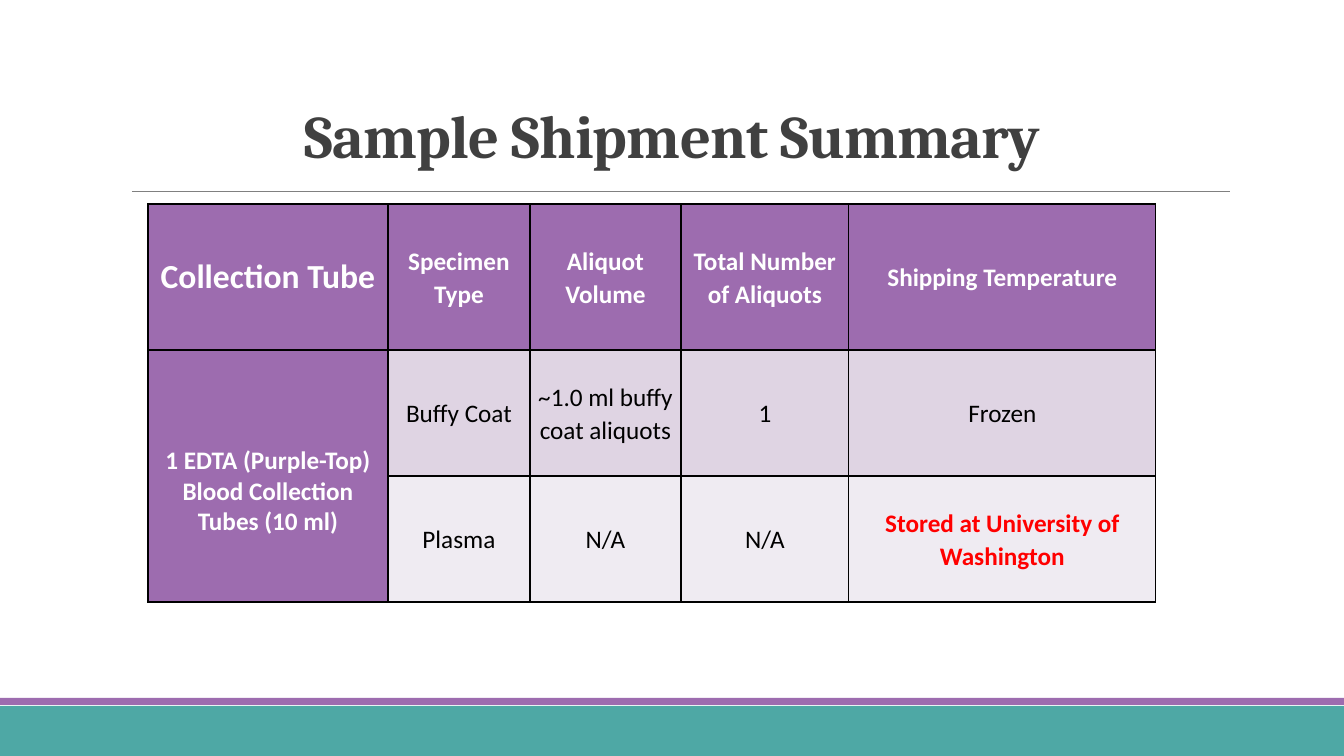
from lxml.etree import SubElement
from pptx import Presentation
from pptx.dml.color import RGBColor
from pptx.enum.shapes import MSO_CONNECTOR, MSO_SHAPE
from pptx.enum.text import MSO_ANCHOR, PP_ALIGN
from pptx.oxml import parse_xml
from pptx.oxml.ns import nsdecls, qn
from pptx.util import Emu, Pt

TEAL = RGBColor(0x4E, 0xA8, 0xA5)
PURPLE = RGBColor(0x9D, 0x6C, 0xAF)
LILAC = RGBColor(0xDF, 0xD4, 0xE3)
PALE = RGBColor(0xEF, 0xEB, 0xF2)
GRAY = RGBColor(0x80, 0x80, 0x80)
INK = RGBColor(0x40, 0x40, 0x40)
BLACK = RGBColor(0, 0, 0)
WHITE = RGBColor(0xFF, 0xFF, 0xFF)
RED = RGBColor(0xFF, 0, 0)

BODY = {"name": "Calibri", "size": Pt(18), "bold": False, "color": BLACK}
HEAD = {**BODY, "bold": True, "color": WHITE}
TUBE_HEAD = {**HEAD, "size": Pt(24)}
ALERT = {**BODY, "bold": True, "color": RED}
TITLE = {"name": "Cambria", "size": Pt(43.2), "bold": True, "color": INK}

COLUMNS = [240, 142, 151, 168, 307]
ROWS = [146, 126, 126]
FILLS = [PURPLE, LILAC, PALE]
SUMMARY = [
    ["Collection Tube", "Specimen Type", "Aliquot Volume",
     "Total Number of Aliquots", "Shipping Temperature"],
    ["1 EDTA (Purple-Top) Blood Collection Tubes (10 ml)", "Buffy Coat",
     "~1.0 ml buffy coat aliquots", "1", "Frozen"],
    ["", "Plasma", "N/A", "N/A", "Stored at University of Washington"],
]


def px(n):
    return Emu(round(n * 914400 / 100.8))


class SlideBuilder:
    """Draws styled elements on one slide, with lengths in px."""

    def __init__(self, prs):
        self.s = prs.slides.add_slide(prs.slide_layouts[6])

    def text(self, tf, text, style, spacing):
        p = tf.paragraphs[0]
        p.alignment = PP_ALIGN.CENTER
        p.line_spacing = spacing
        r = p.add_run()
        r.text = text
        for key, value in style.items():
            if key == "color":
                r.font.color.rgb = value
            else:
                setattr(r.font, key, value)
        return r

    def band(self, x, y, w, h, color):
        sp = self.s.shapes.add_shape(MSO_SHAPE.RECTANGLE, px(x), px(y), px(w), px(h))
        sp.shadow.inherit = False
        sp.fill.solid()
        sp.fill.fore_color.rgb = color
        sp.line.fill.background()

    def rule(self, x1, x2, y, color):
        line = self.s.shapes.add_connector(
            MSO_CONNECTOR.STRAIGHT, px(x1), px(y), px(x2), px(y))
        line.line.color.rgb = color
        line.line.width = Pt(0.5)
        SubElement(line._element.spPr, qn("a:effectLst"))

    def title(self, x, y, w, h, text):
        tf = self.s.shapes.add_textbox(px(x), px(y), px(w), px(h)).text_frame
        tf.word_wrap = True
        tf.vertical_anchor = MSO_ANCHOR.BOTTOM
        r = self.text(tf, text, TITLE, 0.85)
        r._r.get_or_add_rPr().set("spc", "-50")

    def cell(self, cell, fill, margins):
        cell.fill.solid()
        cell.fill.fore_color.rgb = fill
        cell.vertical_anchor = MSO_ANCHOR.MIDDLE
        for side, margin in zip(("left", "top", "right", "bottom"), margins):
            setattr(cell, f"margin_{side}", px(margin))
        for i, side in enumerate("LRTB"):
            cell._tc.get_or_add_tcPr().insert(i, parse_xml(
                f'<a:ln{side} {nsdecls("a")} w="12700"><a:solidFill>'
                f'<a:srgbClr val="{BLACK}"/></a:solidFill></a:ln{side}>'))

    def table(self, x, y):
        frame = self.s.shapes.add_table(
            len(ROWS), len(COLUMNS), px(x), px(y), px(sum(COLUMNS)), px(sum(ROWS)))
        table = frame.table
        table.first_row = table.horz_banding = False
        for column, width in zip(table.columns, COLUMNS):
            column.width = px(width)
        for row, height in zip(table.rows, ROWS):
            row.height = px(height)
        for i, texts in enumerate(SUMMARY):
            for j, text in enumerate(texts):
                tube = j == 0
                margins = (7, 36, 7, 5) if tube and i else (7, 0, 7, 0)
                self.cell(table.cell(i, j), PURPLE if tube else FILLS[i], margins)
                if text:
                    style = HEAD if tube or i == 0 else BODY
                    if i == 0 and tube:
                        style = TUBE_HEAD
                    elif text.startswith("Stored"):
                        style = ALERT
                    self.text(table.cell(i, j).text_frame, text, style, 1.0 if tube else 1.07)
        table.cell(1, 0).merge(table.cell(2, 0))


def main():
    prs = Presentation()
    prs.slide_width, prs.slide_height = px(1344), px(756)
    slide = SlideBuilder(prs)
    slide.band(0, 706, 1344, 50, TEAL)
    slide.band(0, 698, 1344, 7, PURPLE)
    slide.rule(132, 1230, 191, GRAY)
    slide.title(220, 71, 904, 105, "Sample Shipment Summary")
    slide.table(148, 204)
    prs.save("out.pptx")


if __name__ == "__main__":
    main()
